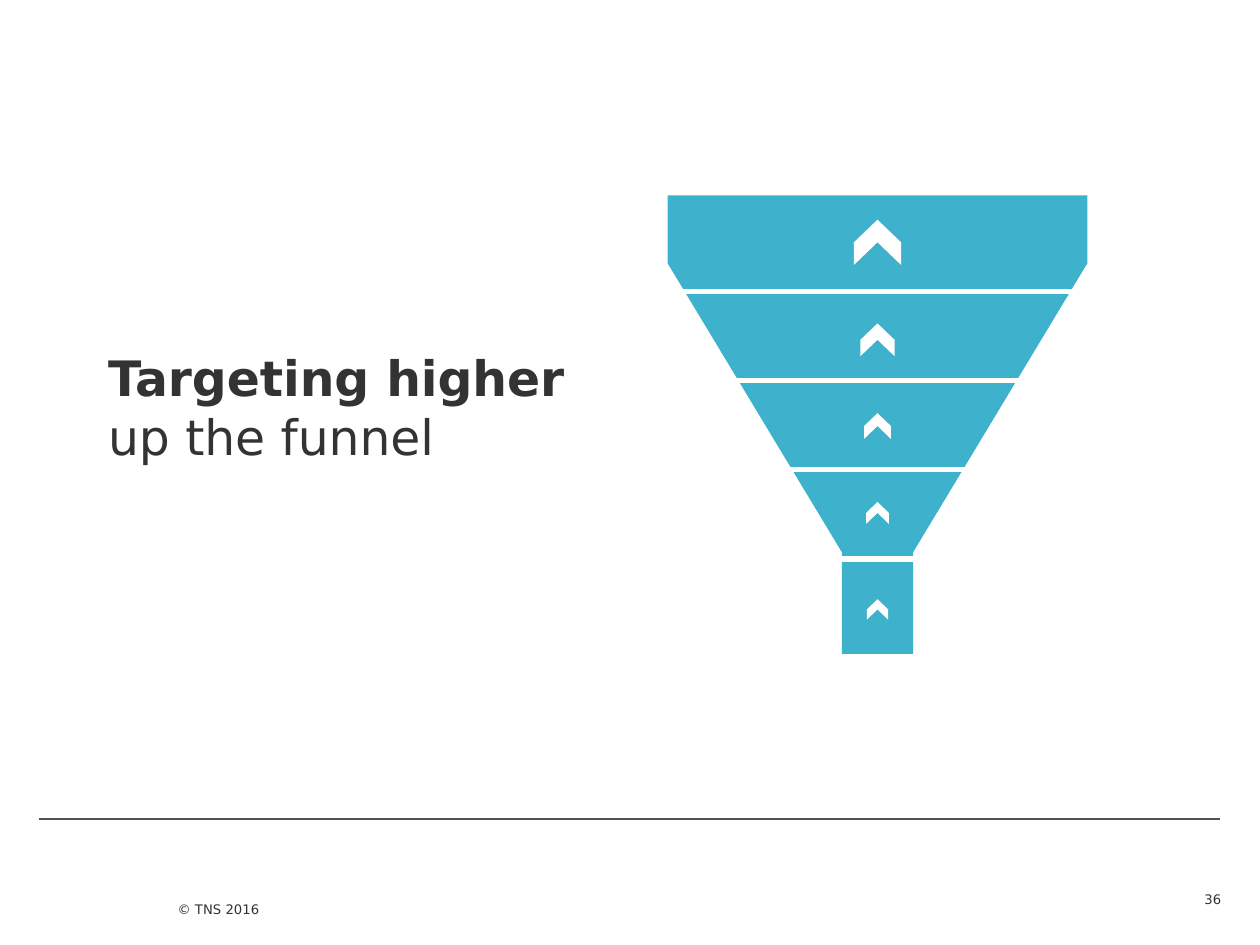
from dataclasses import dataclass

from lxml.etree import SubElement
from pptx import Presentation
from pptx.dml.color import RGBColor
from pptx.enum.shapes import MSO_CONNECTOR
from pptx.enum.text import MSO_ANCHOR, PP_ALIGN
from pptx.oxml.ns import qn
from pptx.util import Cm, Pt


@dataclass(frozen=True)
class Theme:
    font: str = "DejaVu Sans"
    ink: RGBColor = RGBColor(0x33, 0x33, 0x33)
    rule: RGBColor = RGBColor(0x52, 0x52, 0x52)
    funnel: RGBColor = RGBColor(0x3E, 0xB1, 0xCC)
    white: RGBColor = RGBColor(0xFF, 0xFF, 0xFF)
    title_size: float = 27.9
    footer_size: float = 7.5
    rule_width: float = 0.75
    divider_width: float = 3


THEME = Theme()

# All lengths below are centimetres.
TITLE = "Targeting higher\vup the funnel"
FOOTER = "© TNS 2016"
PAGE_NUMBER = "36"

CENTRE = 17.69
# Half width and y of the funnel's right side, from top to bottom
FUNNEL_SIDE = [(4.23, 3.94), (4.23, 5.31), (0.72, 11.13), (0.72, 13.18)]
# Left and right end of each divider, from top to bottom
DIVIDERS = [(13.0, 21.92), (14.66, 20.73), (15.82, 19.56), (16.81, 18.57)]
DIVIDER_TOP, DIVIDER_STEP = 5.87, 1.8
# Top and width of each upward chevron
CHEVRONS = [(4.43, 0.95), (6.52, 0.69), (8.33, 0.54), (10.12, 0.46), (12.08, 0.43)]
CHEVRON_RATIO = 0.96


def add_outline(shapes, points, color):
    (start_x, start_y), *others = [(Cm(x), Cm(y)) for x, y in points]
    builder = shapes.build_freeform(start_x, start_y)
    builder.add_line_segments(others, close=True)
    shape = builder.convert_to_shape()
    shape.shadow.inherit = False
    shape.fill.solid()
    shape.fill.fore_color.rgb = color
    shape.line.fill.background()


def add_level_line(shapes, left, right, y, color, width):
    line = shapes.add_connector(
        MSO_CONNECTOR.STRAIGHT, Cm(left), Cm(y), Cm(right), Cm(y))
    line.line.color.rgb = color
    line.line.width = Pt(width)
    SubElement(line._element.spPr, qn("a:effectLst"))


def add_text(page, text, frame, size, anchor, top=0, bottom=0, wrap=True):
    """Add a text box with the given top and bottom insets; return its paragraph."""
    box = page.shapes.add_textbox(*map(Cm, frame))
    text_frame = box.text_frame
    text_frame.word_wrap = wrap
    text_frame.vertical_anchor = anchor
    text_frame.margin_left = text_frame.margin_right = 0
    text_frame.margin_top, text_frame.margin_bottom = Cm(top), Cm(bottom)
    paragraph = text_frame.paragraphs[0]
    paragraph.text = text
    for span in paragraph.runs:
        span.font.name = THEME.font
        span.font.size = Pt(size)
        span.font.color.rgb = THEME.ink
    return paragraph


def add_funnel(page):
    shapes = page.shapes.add_group_shape().shapes
    right = [(CENTRE + half, y) for half, y in FUNNEL_SIDE]
    left = [(CENTRE - half, y) for half, y in reversed(FUNNEL_SIDE)]
    add_outline(shapes, right + left, THEME.funnel)
    for index, (start, end) in enumerate(DIVIDERS):
        add_level_line(shapes, start, end, DIVIDER_TOP + index * DIVIDER_STEP,
                       THEME.white, THEME.divider_width)


def add_chevron(page, top, width):
    height = width * CHEVRON_RATIO
    left, right = CENTRE - width / 2, CENTRE + width / 2
    middle, bottom = top + height / 2, top + height
    add_outline(page.shapes, [
        (CENTRE, top), (right, middle), (right, bottom),
        (CENTRE, middle), (left, bottom), (left, middle),
    ], THEME.white)


def main():
    deck = Presentation()
    deck.slide_width, deck.slide_height = Cm(25.4), Cm(19.05)
    page = deck.slides.add_slide(deck.slide_layouts[6])

    add_level_line(page.shapes, 0.79, 24.59, 16.51, THEME.rule, THEME.rule_width)
    add_text(page, FOOTER, (3.58, 17.58, 7.06, 1.47), THEME.footer_size,
             MSO_ANCHOR.BOTTOM, bottom=0.79)
    title = add_text(page, TITLE, (2.18, 6.32, 10.46, 3.18), THEME.title_size,
                     MSO_ANCHOR.MIDDLE, top=0.58)
    title.runs[0].font.bold = True

    add_funnel(page)
    for top, width in CHEVRONS:
        add_chevron(page, top, width)

    number = add_text(page, PAGE_NUMBER, (23.22, 17.58, 1.4, 0.71),
                      THEME.footer_size, MSO_ANCHOR.BOTTOM, wrap=False)
    number.alignment = PP_ALIGN.RIGHT
    deck.save("out.pptx")


if __name__ == "__main__":
    main()
